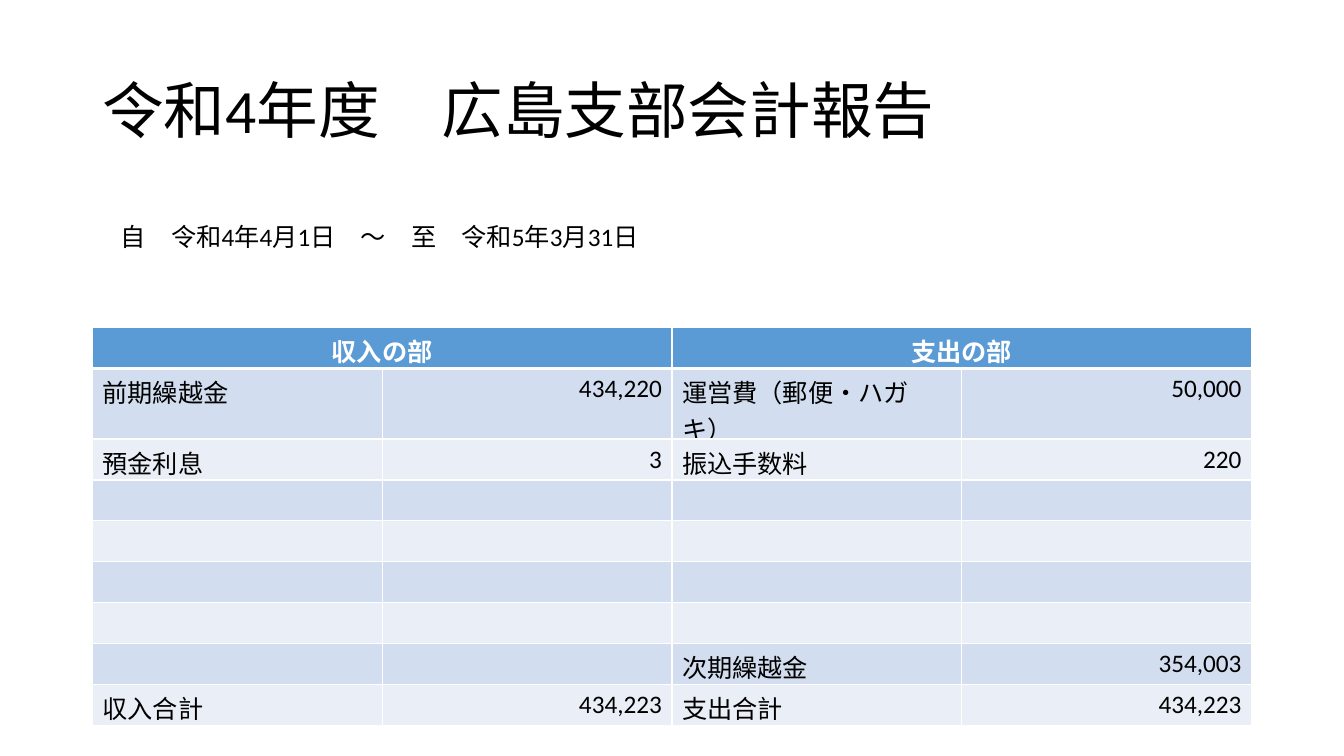
from dataclasses import dataclass

import pptx
import pptx.dml.color
import pptx.enum.text
import pptx.oxml
import pptx.oxml.ns
import pptx.slide
import pptx.table
import pptx.text.text
import pptx.util

Pt = pptx.util.Pt
RGBColor = pptx.dml.color.RGBColor
Align = pptx.enum.text.PP_ALIGN
Anchor = pptx.enum.text.MSO_ANCHOR

BLACK = RGBColor(0x00, 0x00, 0x00)
WHITE = RGBColor(0xFF, 0xFF, 0xFF)
HEADER_BLUE = RGBColor(0x5B, 0x9B, 0xD5)
BANDS = (RGBColor(0xD2, 0xDE, 0xEF), RGBColor(0xEA, 0xEF, 0xF7))
FONT = "Calibri"
BODY_SIZE = 18
COLUMN_WIDTH = 207
ROW_HEIGHT = 29.2


@dataclass(frozen=True)
class Caption:
    text: str
    left: float
    top: float
    width: float
    height: float
    size: float
    anchor: Anchor
    line_spacing: float


@dataclass(frozen=True)
class LedgerRow:
    income: str = ""
    income_amount: str = ""
    expense: str = ""
    expense_amount: str = ""

    def cells(self) -> tuple[str, ...]:
        return self.income, self.income_amount, self.expense, self.expense_amount


CAPTIONS = (
    Caption("令和4年度　広島支部会計報告", 66, 28.8, 828, 104.4, 44, Anchor.MIDDLE, 0.9),
    Caption("自　令和4年4月1日　～　至　令和5年3月31日", 79.2, 154.8, 740, 28.8,
            BODY_SIZE, Anchor.TOP, 1.0),
)
SECTIONS = ("収入の部", "支出の部")
LEDGER = (
    LedgerRow("前期繰越金", "434,220", "運営費（郵便・ハガキ）", "50,000"),
    LedgerRow("預金利息", "3", "振込手数料", "220"),
    *[LedgerRow()] * 4,
    LedgerRow(expense="次期繰越金", expense_amount="354,003"),
    LedgerRow("収入合計", "434,223", "支出合計", "434,223"),
)


def write(frame: pptx.text.text.TextFrame, text: str, size: float, color: RGBColor,
          align: Align = Align.LEFT, bold: bool = False) -> None:
    frame.text = text
    paragraph = frame.paragraphs[0]
    paragraph.alignment = align
    paragraph.font.size = Pt(size)
    for run in paragraph.runs:
        run.font.name = FONT
        run.font.size = Pt(size)
        run.font.bold = bold
        run.font.color.rgb = color


def draw_caption(slide: pptx.slide.Slide, caption: Caption) -> None:
    box = slide.shapes.add_textbox(
        Pt(caption.left), Pt(caption.top), Pt(caption.width), Pt(caption.height))
    frame = box.text_frame
    frame.word_wrap = True
    frame.vertical_anchor = caption.anchor
    write(frame, caption.text, caption.size, BLACK)
    frame.paragraphs[0].line_spacing = caption.line_spacing


def style_cell(cell: pptx.table._Cell, fill: RGBColor, top: float, bottom: float) -> None:
    cell.fill.solid()
    cell.fill.fore_color.rgb = fill
    properties = cell._tc.get_or_add_tcPr()
    borders = {"lnL": 1, "lnR": 1, "lnT": top, "lnB": bottom}
    for position, (side, width) in enumerate(borders.items()):
        border = pptx.oxml.parse_xml(
            f'<a:{side} {pptx.oxml.ns.nsdecls("a")} w="{Pt(width)}">'
            f'<a:solidFill><a:srgbClr val="{WHITE}"/></a:solidFill></a:{side}>')
        properties.insert(position, border)


def draw_ledger(slide: pptx.slide.Slide) -> None:
    row_count = len(LEDGER) + 1
    table = slide.shapes.add_table(
        row_count, 4, Pt(66), Pt(234), Pt(4 * COLUMN_WIDTH), Pt(row_count * ROW_HEIGHT)).table
    table.horz_banding = False
    for column in table.columns:
        column.width = Pt(COLUMN_WIDTH)
    for row in table.rows:
        row.height = Pt(ROW_HEIGHT)

    for column in range(4):
        style_cell(table.cell(0, column), HEADER_BLUE, 1, 3)
    for index, section in enumerate(SECTIONS):
        header = table.cell(0, 2 * index)
        header.merge(table.cell(0, 2 * index + 1))
        write(header.text_frame, section, BODY_SIZE, WHITE, Align.CENTER, True)

    for row, entry in enumerate(LEDGER, start=1):
        for column, text in enumerate(entry.cells()):
            cell = table.cell(row, column)
            style_cell(cell, BANDS[(row - 1) % 2], 3 if row == 1 else 1, 1)
            align = Align.RIGHT if column % 2 else Align.LEFT
            write(cell.text_frame, text, BODY_SIZE, BLACK, align)


def main() -> None:
    presentation = pptx.Presentation()
    presentation.slide_width = Pt(960)
    presentation.slide_height = Pt(540)
    slide = presentation.slides.add_slide(presentation.slide_layouts[6])
    title, period = CAPTIONS
    draw_caption(slide, title)
    draw_ledger(slide)
    draw_caption(slide, period)
    presentation.save("out.pptx")


if __name__ == "__main__":
    main()
